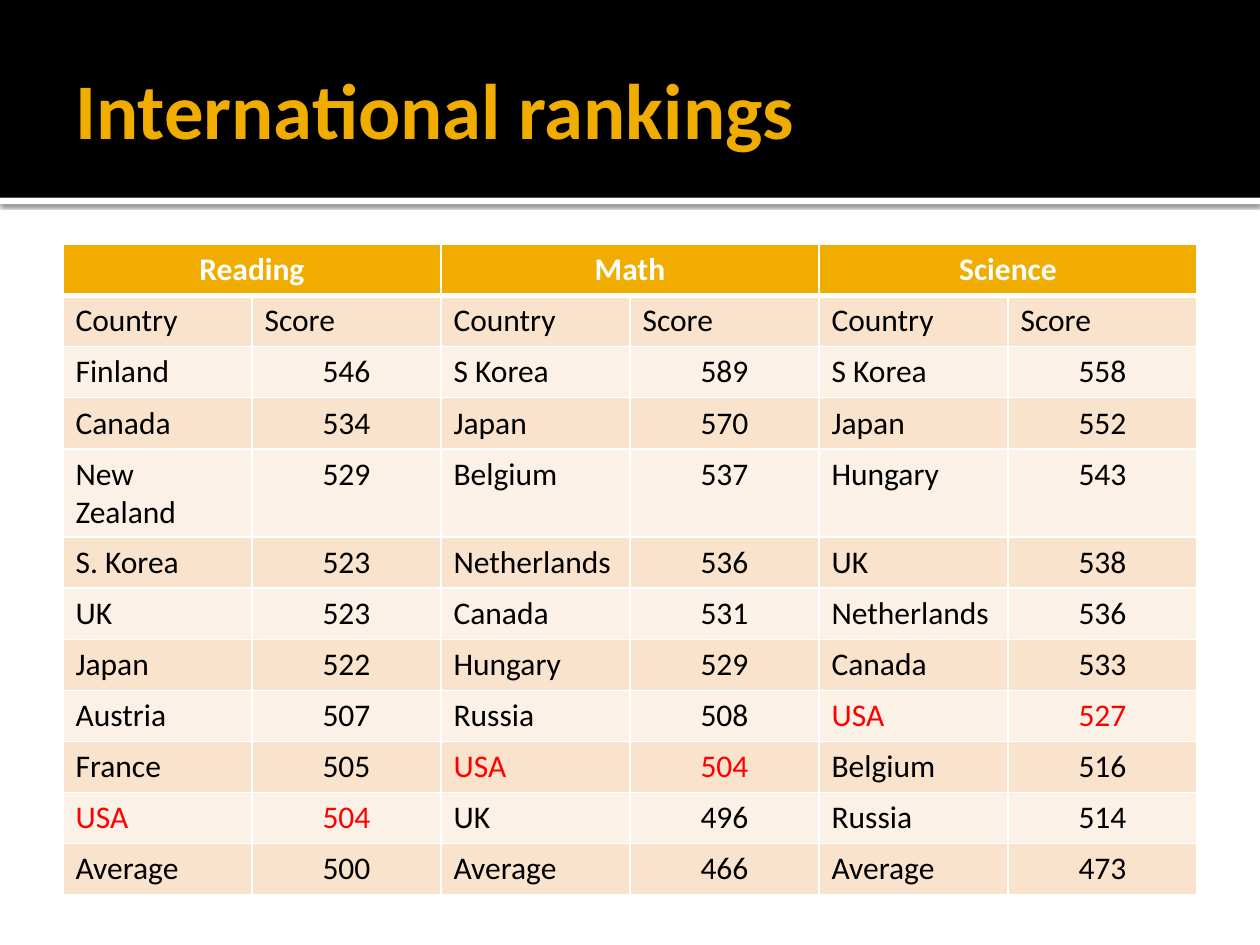
from pptx import Presentation
from pptx.dml.color import RGBColor
from pptx.enum.shapes import MSO_SHAPE
from pptx.enum.text import MSO_ANCHOR, PP_ALIGN
from pptx.oxml import parse_xml
from pptx.oxml.ns import nsdecls, qn
from pptx.util import Inches, Pt

BLACK = RGBColor(0x00, 0x00, 0x00)
WHITE = RGBColor(0xFF, 0xFF, 0xFF)
GOLD = RGBColor(0xF0, 0xAD, 0x00)
RED = RGBColor(0xFF, 0x00, 0x00)
BAND_DARK = RGBColor(0xF9, 0xE3, 0xCC)
BAND_LIGHT = RGBColor(0xFC, 0xF1, 0xE7)

SUBJECTS = ["Reading", "Math", "Science"]
ROWS = [
    ["Country", "Score"] * 3,
    ["Finland", "546", "S Korea", "589", "S Korea", "558"],
    ["Canada", "534", "Japan", "570", "Japan", "552"],
    ["New Zealand", "529", "Belgium", "537", "Hungary", "543"],
    ["S. Korea", "523", "Netherlands", "536", "UK", "538"],
    ["UK", "523", "Canada", "531", "Netherlands", "536"],
    ["Japan", "522", "Hungary", "529", "Canada", "533"],
    ["Austria", "507", "Russia", "508", "USA", "527"],
    ["France", "505", "USA", "504", "Belgium", "516"],
    ["USA", "504", "UK", "496", "Russia", "514"],
    ["Average", "500", "Average", "466", "Average", "473"],
]


def write(tf, text, align=PP_ALIGN.LEFT, **font):
    p = tf.paragraphs[0]
    p.alignment = align
    r = p.add_run()
    r.text = text
    r.font.name = "Calibri"
    r.font.color.rgb = font.pop("color")
    for name, value in font.items():
        setattr(r.font, name, value)


def style_cell(cell, fill, bottom=1):
    """Draw white borders, the bottom one in its own width, and fill the cell."""
    tcPr = cell._tc.get_or_add_tcPr()
    for side, width in {"L": 1, "R": 1, "T": 1, "B": bottom}.items():
        tcPr.append(parse_xml(
            f'<a:ln{side} {nsdecls("a")} w="{Pt(width)}"><a:solidFill>'
            f'<a:srgbClr val="{WHITE}"/></a:solidFill></a:ln{side}>'))
    cell.fill.solid()
    cell.fill.fore_color.rgb = fill


prs = Presentation()
prs.slide_width, prs.slide_height = Inches(10), Inches(7.5)
s = prs.slides.add_slide(prs.slide_layouts[6])

# Header band with a shadowed white strip below it
for top, height, color in [(1.57, 0.05, WHITE), (0, 1.57, BLACK)]:
    sp = s.shapes.add_shape(MSO_SHAPE.RECTANGLE, 0, Inches(top),
                            prs.slide_width, Inches(height))
    sp.fill.solid()
    sp.fill.fore_color.rgb = color
    sp.line.fill.background()
    sp.shadow.inherit = False
    if color == WHITE:
        sp._element.spPr.find(qn("a:effectLst")).append(parse_xml(
            f'<a:outerShdw {nsdecls("a")} blurRad="{Pt(2.5)}" dist="{Pt(0.8)}" '
            f'dir="5400000" algn="tl" rotWithShape="0"><a:srgbClr val="{BLACK}">'
            '<a:alpha val="60000"/></a:srgbClr></a:outerShdw>'))

title = s.shapes.add_textbox(Inches(0.5), Inches(0.17), Inches(9), Inches(1.37))
tf = title.text_frame
tf.word_wrap = True
tf.vertical_anchor = MSO_ANCHOR.MIDDLE
tf.margin_right = Inches(0.05)
write(tf, "International rankings", size=Pt(45), bold=True, color=GOLD)

# Rankings table: one country and score pair of columns per subject
table = s.shapes.add_table(len(ROWS) + 1, 6, Inches(0.5), Inches(1.94),
                           Inches(9), Inches(4.87)).table
for i, subject in enumerate(SUBJECTS):
    left, right = table.cell(0, 2 * i), table.cell(0, 2 * i + 1)
    left.merge(right)
    for cell in (left, right):
        style_cell(cell, GOLD, bottom=3)
    write(left.text_frame, subject, PP_ALIGN.CENTER,
          size=Pt(18), bold=True, color=WHITE)

for i, row in enumerate(ROWS, start=1):
    for j, text in enumerate(row):
        cell = table.cell(i, j)
        style_cell(cell, BAND_DARK if i % 2 else BAND_LIGHT)
        country = row[j - j % 2]
        write(cell.text_frame, text,
              PP_ALIGN.CENTER if text.isdigit() else PP_ALIGN.LEFT,
              size=Pt(18), bold=False, color=RED if country == "USA" else BLACK)

prs.save("out.pptx")
